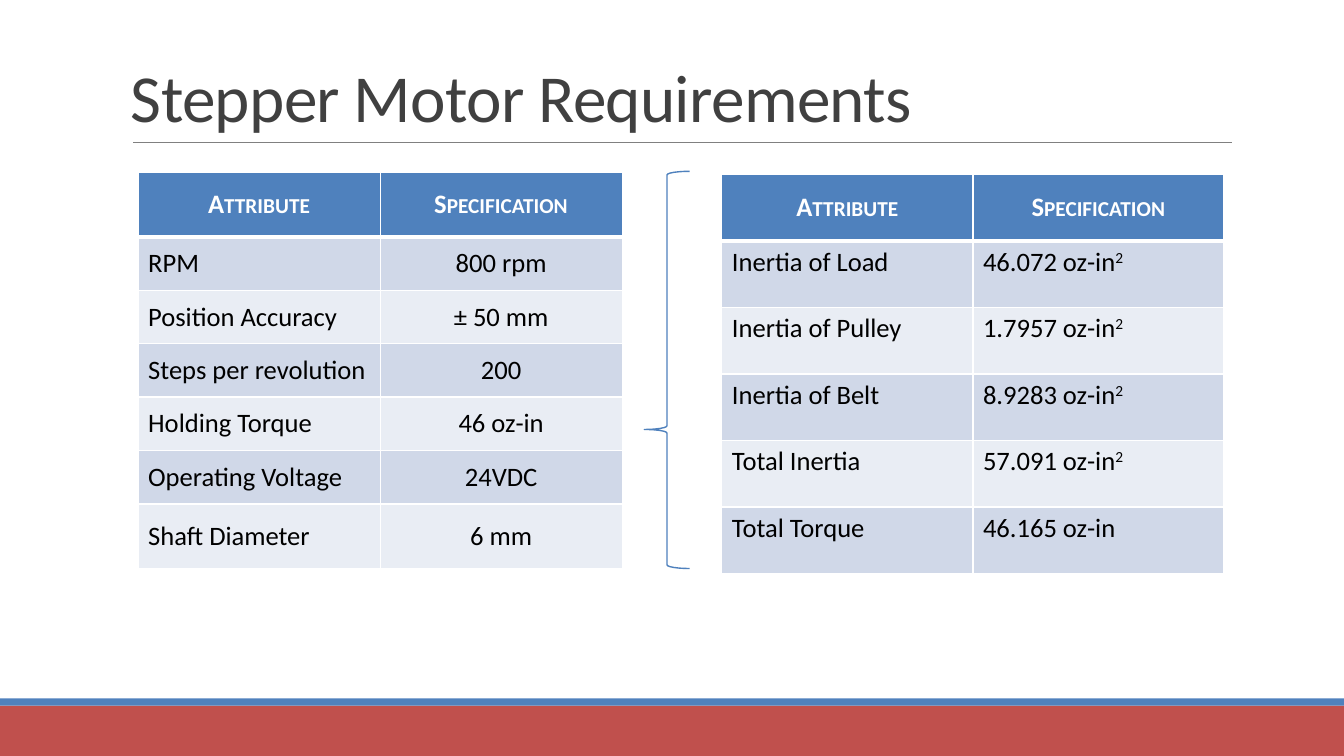
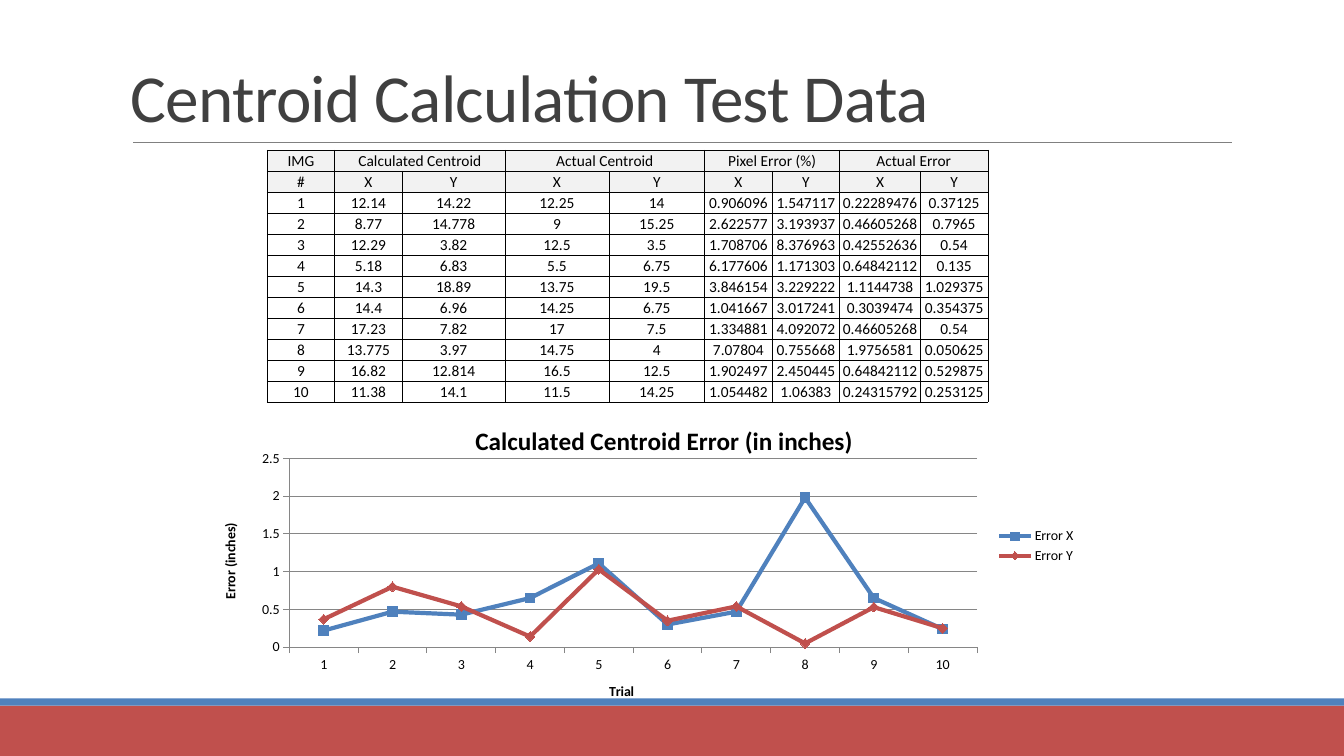
from lxml.etree import SubElement
from pptx import Presentation
from pptx.chart.data import CategoryChartData
from pptx.dml.color import RGBColor
from pptx.enum.chart import XL_CHART_TYPE, XL_LEGEND_POSITION, XL_MARKER_STYLE, XL_TICK_MARK
from pptx.enum.shapes import MSO_CONNECTOR, MSO_SHAPE
from pptx.enum.text import MSO_ANCHOR, PP_ALIGN
from pptx.oxml.ns import qn
from pptx.util import Inches, Pt

FONT = "Calibri"
BLUE, RED, WHITE, BLACK = "4F81BD", "C0504D", "FFFFFF", "000000"
TITLE_GRAY, RULE_GRAY, CHART_GRAY, HEADER_GRAY = "404040", "808080", "868686", "F2F2F2"
BAND_FILLS = ("D0D8E8", "E9EDF4")
SLIDE_WIDTH, SLIDE_HEIGHT = 13.33, 7.5

MOTOR_ROWS = [
    ("RPM", "800 rpm"),
    ("Position Accuracy", "± 50 mm"),
    ("Steps per revolution", "200"),
    ("Holding Torque", "46 oz-in"),
    ("Operating Voltage", "24VDC"),
    ("Shaft Diameter", "6 mm"),
]
INERTIA_ROWS = [
    ("Inertia of Load", "46.072 oz-in^2"),
    ("Inertia of Pulley", "1.7957 oz-in^2"),
    ("Inertia of Belt", "8.9283 oz-in^2"),
    ("Total Inertia", "57.091 oz-in^2"),
    ("Total Torque", "46.165 oz-in"),
]
CENTROID_GROUPS = ["Calculated Centroid", "Actual Centroid", "Pixel Error (%)", "Actual Error"]
CENTROID_ROWS = [line.split() for line in """
1 12.14 14.22 12.25 14 0.906096 1.547117 0.22289476 0.37125
2 8.77 14.778 9 15.25 2.622577 3.193937 0.46605268 0.7965
3 12.29 3.82 12.5 3.5 1.708706 8.376963 0.42552636 0.54
4 5.18 6.83 5.5 6.75 6.177606 1.171303 0.64842112 0.135
5 14.3 18.89 13.75 19.5 3.846154 3.229222 1.1144738 1.029375
6 14.4 6.96 14.25 6.75 1.041667 3.017241 0.3039474 0.354375
7 17.23 7.82 17 7.5 1.334881 4.092072 0.46605268 0.54
8 13.775 3.97 14.75 4 7.07804 0.755668 1.9756581 0.050625
9 16.82 12.814 16.5 12.5 1.902497 2.450445 0.64842112 0.529875
10 11.38 14.1 11.5 14.25 1.054482 1.06383 0.24315792 0.253125
""".strip().splitlines()]


def color(hex_string):
    return RGBColor.from_string(hex_string)


def set_font(font, size, hex_string=BLACK, bold=False):
    font.name = FONT
    font.size = Pt(size)
    font.bold = bold
    font.color.rgb = color(hex_string)


def add_band(slide, top, height, fill):
    band = slide.shapes.add_shape(MSO_SHAPE.RECTANGLE, 0, Inches(top), Inches(SLIDE_WIDTH), Inches(height))
    band.shadow.inherit = False
    band.fill.solid()
    band.fill.fore_color.rgb = color(fill)
    band.line.fill.background()


def add_titled_slide(presentation, title):
    slide = presentation.slides.add_slide(presentation.slide_layouts[6])
    add_band(slide, 7, 0.5, RED)
    add_band(slide, 6.93, 0.07, BLUE)
    rule = slide.shapes.add_connector(
        MSO_CONNECTOR.STRAIGHT, Inches(1.32), Inches(1.41), Inches(12.22), Inches(1.41))
    rule.line.color.rgb = color(RULE_GRAY)
    rule.line.width = Pt(0.5)
    SubElement(rule._element.spPr, qn("a:effectLst"))
    text_frame = slide.shapes.add_textbox(Inches(1.2), Inches(0.31), Inches(11), Inches(1.09)).text_frame
    text_frame.word_wrap = True
    text_frame.vertical_anchor = MSO_ANCHOR.BOTTOM
    paragraph = text_frame.paragraphs[0]
    paragraph.text = title
    paragraph.line_spacing = 0.85
    set_font(paragraph.font, 48, TITLE_GRAY)
    paragraph.font._element.set("spc", "-50")
    return slide


def add_grid(slide, left, top, widths, heights):
    frame = slide.shapes.add_table(
        len(heights), len(widths), Inches(left), Inches(top), Inches(sum(widths)), Inches(sum(heights)))
    table = frame.table
    table.first_row = table.horz_banding = False
    for column, width in zip(table.columns, widths):
        column.width = Inches(width)
    for row, height in zip(table.rows, heights):
        row.height = Inches(height)
    return table


def set_borders(cell, hex_string, width, top=None, bottom=None):
    properties = cell._tc.get_or_add_tcPr()
    for side, points in (("L", width), ("R", width), ("T", top or width), ("B", bottom or width)):
        line = SubElement(properties, qn(f"a:ln{side}"), w=str(Pt(points)))
        SubElement(SubElement(line, qn("a:solidFill")), qn("a:srgbClr"), val=hex_string)


def fill_cell(cell, text, size, align, anchor, fill=None, hex_string=BLACK, bold=False):
    if fill:
        cell.fill.solid()
        cell.fill.fore_color.rgb = color(fill)
    else:
        cell.fill.background()
    cell.vertical_anchor = anchor
    paragraph = cell.text_frame.paragraphs[0]
    paragraph.alignment = align
    set_font(paragraph.font, size, hex_string, bold)
    base, _, exponent = text.partition("^")
    if base:
        paragraph.add_run().text = base
    if exponent:
        run = paragraph.add_run()
        run.text = exponent
        run.font._element.set("baseline", "30000")
    return paragraph


def add_specification_table(slide, left, top, column_width, heights, rows, value_align, anchor):
    table = add_grid(slide, left, top, [column_width] * 2, heights)
    for column, heading in enumerate(("Attribute", "Specification")):
        cell = table.cell(0, column)
        set_borders(cell, WHITE, 1, bottom=3)
        paragraph = fill_cell(cell, heading, 19, PP_ALIGN.CENTER, MSO_ANCHOR.MIDDLE, BLUE, WHITE, True)
        paragraph.font._element.set("cap", "small")
    for index, row in enumerate(rows):
        for column, (text, align) in enumerate(zip(row, (PP_ALIGN.LEFT, value_align))):
            cell = table.cell(index + 1, column)
            set_borders(cell, WHITE, 1, top=1 if index else 3)
            fill_cell(cell, text, 19, align, anchor, BAND_FILLS[index % 2])


def add_brace(slide, left, top, width, height):
    brace = slide.shapes.add_shape(
        MSO_SHAPE.LEFT_BRACE, Inches(left), Inches(top), Inches(width), Inches(height))
    brace.shadow.inherit = False
    brace.adjustments[0] = 0.08
    brace.adjustments[1] = 0.65
    brace.fill.background()
    brace.line.color.rgb = color(BLUE)
    brace.line.width = Pt(1)


def add_centroid_table(slide, left, top):
    group_row = ["IMG"] + [text for group in CENTROID_GROUPS for text in (group, "")]
    rows = [group_row, ["#"] + ["X", "Y"] * len(CENTROID_GROUPS)] + CENTROID_ROWS
    widths = [0.67, 0.67, 1.02, 1.03, 0.95, 0.67, 0.67, 0.8, 0.67]
    table = add_grid(slide, left, top, widths, [2.5 / len(rows)] * len(rows))
    for row_index, row in enumerate(rows):
        for column, text in enumerate(row):
            cell = table.cell(row_index, column)
            cell.margin_left = cell.margin_right = cell.margin_top = cell.margin_bottom = 0
            set_borders(cell, BLACK, 0.5)
            fill = HEADER_GRAY if row_index < 2 else None
            fill_cell(cell, text, 11, PP_ALIGN.CENTER, MSO_ANCHOR.BOTTOM, fill)
    for column in range(1, len(widths), 2):
        table.cell(0, column).merge(table.cell(0, column + 1))


def set_layout(element, index, x, y, w=None, h=None):
    for existing in element.findall(qn("c:layout")):
        element.remove(existing)
    layout = element.makeelement(qn("c:layout"))
    element.insert(index, layout)
    manual = SubElement(layout, qn("c:manualLayout"))
    if w:
        SubElement(manual, qn("c:layoutTarget"), val="inner")
    for name in ("xMode", "yMode"):
        SubElement(manual, qn(f"c:{name}"), val="edge")
    for name, value in (("x", x), ("y", y), ("w", w), ("h", h)):
        if value:
            SubElement(manual, qn(f"c:{name}"), val=str(value))


def set_chart_title(title, text, size, x, y):
    paragraph = title.text_frame.paragraphs[0]
    paragraph.text = text
    set_font(paragraph.font, size, bold=True)
    set_layout(title._element, 1, x, y)


def add_error_chart(slide, left, top, width, height):
    data = CategoryChartData()
    data.categories = [row[0] for row in CENTROID_ROWS]
    for name, column in (("Error X", -2), ("Error Y", -1)):
        data.add_series(name, [round(float(row[column]), 2) for row in CENTROID_ROWS])
    chart = slide.shapes.add_chart(
        XL_CHART_TYPE.LINE_MARKERS, Inches(left), Inches(top), Inches(width), Inches(height), data).chart
    set_font(chart.font, 10)
    set_chart_title(chart.chart_title, "Calculated Centroid Error (in inches)", 18, 0.37, 0.09)
    chart.chart_title.include_in_layout = True
    set_layout(chart._chartSpace.chart.plotArea, 0, 0.183, 0.217, 0.709, 0.609)

    chart.has_legend = True
    chart.legend.position = XL_LEGEND_POSITION.RIGHT
    chart.legend.include_in_layout = False
    set_layout(chart.legend._element, 1, 0.91, 0.43)

    value_axis, category_axis = chart.value_axis, chart.category_axis
    set_chart_title(category_axis.axis_title, "Trial", 10, 0.51, 0.93)
    set_chart_title(value_axis.axis_title, "Error (inches)", 10, 0.11, 0.42)
    value_axis.axis_title.text_frame._txBody.bodyPr.set("rot", "-5400000")
    value_axis.minimum_scale, value_axis.maximum_scale, value_axis.major_unit = 0, 2.5, 0.5
    value_axis.has_major_gridlines = True
    for axis in (value_axis, category_axis):
        axis.major_tick_mark = XL_TICK_MARK.OUTSIDE
    for line in (value_axis.format.line, category_axis.format.line, value_axis.major_gridlines.format.line):
        line.color.rgb = color(CHART_GRAY)
        line.width = Pt(0.75)

    plot = chart.plots[0]
    plot.vary_by_categories = False
    markers = (XL_MARKER_STYLE.SQUARE, XL_MARKER_STYLE.DIAMOND)
    for series, hex_string, marker in zip(plot.series, (BLUE, RED), markers):
        series.smooth = False
        series.format.line.color.rgb = color(hex_string)
        series.format.line.width = Pt(3)
        series.marker.style = marker
        series.marker.size = 7
        series.marker.format.fill.solid()
        series.marker.format.fill.fore_color.rgb = color(hex_string)
        series.marker.format.line.color.rgb = color(hex_string)


def build_requirements_slide(presentation):
    slide = add_titled_slide(presentation, "Stepper Motor Requirements")
    add_specification_table(slide, 1.37, 1.71, 2.4, [0.64] + [0.53] * 5 + [0.64],
                            MOTOR_ROWS, PP_ALIGN.CENTER, MSO_ANCHOR.MIDDLE)
    add_specification_table(slide, 7.16, 1.73, 2.49, [0.66] * 6,
                            INERTIA_ROWS, PP_ALIGN.LEFT, MSO_ANCHOR.TOP)
    add_brace(slide, 6.39, 1.7, 0.45, 3.94)


def build_centroid_slide(presentation):
    slide = add_titled_slide(presentation, "Centroid Calculation Test Data")
    add_centroid_table(slide, 2.65, 1.49)
    add_error_chart(slide, 1.11, 3.88, 9.62, 3.1)


def main():
    presentation = Presentation()
    presentation.slide_width = Inches(SLIDE_WIDTH)
    presentation.slide_height = Inches(SLIDE_HEIGHT)
    build_requirements_slide(presentation)
    build_centroid_slide(presentation)
    presentation.save("out.pptx")


if __name__ == "__main__":
    main()
